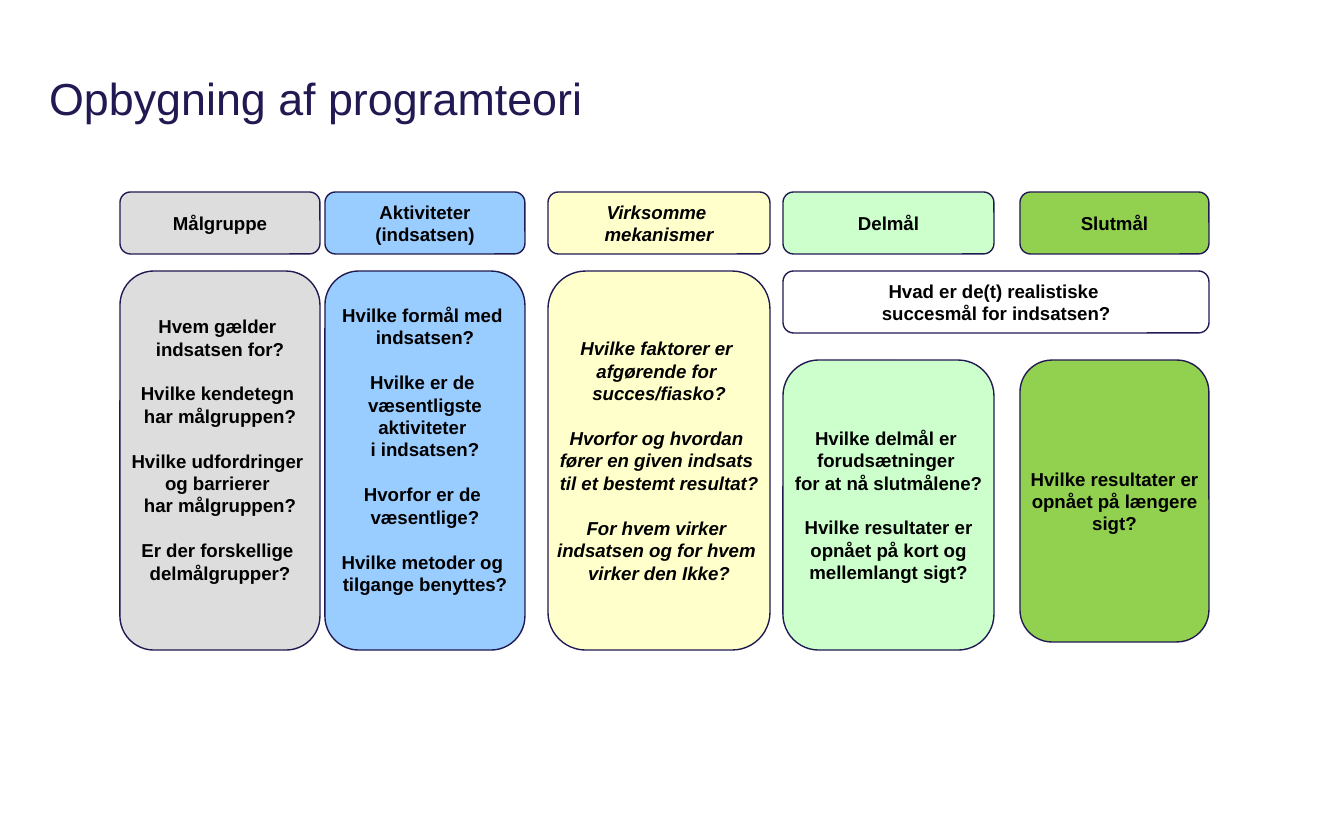
from pptx import Presentation
from pptx import util as u
from pptx.dml.color import RGBColor
from pptx.enum import shapes, text

PX = 914400 / 134.4
FONT = "Arial"
COLORS = {"ink": "211A52", "text": "000000", "gray": "DDDDDD", "blue": "99CCFF",
          "cream": "FFFFCC", "mint": "CCFFCC", "green": "92D050", "white": "FFFFFF"}
TOP, HEAD, DROP, LOW = 192, 62, 79, 168
BLANK = 22

COLUMNS = [
    ((120, TOP, 200, 458), "gray", DROP, BLANK, False, "Målgruppe",
     ["Hvem gælder \nindsatsen for?",
      "Hvilke kendetegn \nhar målgruppen?",
      "Hvilke udfordringer \nog barrierer \nhar målgruppen?",
      "Er der forskellige \ndelmålgrupper?"]),
    ((325, TOP, 200, 458), "blue", DROP, BLANK, False, "Aktiviteter\n(indsatsen)",
     ["Hvilke formål med \nindsatsen?",
      "Hvilke er de \nvæsentligste\naktiviteter \ni indsatsen?",
      "Hvorfor er de \nvæsentlige?",
      "Hvilke metoder og \ntilgange benyttes?"]),
    ((548, TOP, 222, 458), "cream", DROP, 0, True, "Virksomme \nmekanismer",
     ["Hvilke faktorer er \nafgørende for \nsucces/fiasko?",
      "Hvorfor og hvordan \nfører en given indsats \ntil et bestemt resultat?",
      "For hvem virker \nindsatsen og for hvem \nvirker den Ikke?"]),
    ((783, TOP, 211, 458), "mint", LOW, 0, False, "Delmål",
     ["Hvilke delmål er \nforudsætninger \nfor at nå slutmålene?",
      "Hvilke resultater er\nopnået på kort og\nmellemlangt sigt?"]),
    ((1020, TOP, 189, 450), "green", LOW, 0, False, "Slutmål",
     ["Hvilke resultater er\nopnået på længere\nsigt?"]),
]
GOAL = "Hvad er de(t) realistiske \nsuccesmål for indsatsen?"


def px(*sizes):
    """Turn px lengths into EMU."""
    return [u.Emu(round(size * PX)) for size in sizes]


def rgb(name):
    """Look up a named colour."""
    return RGBColor.from_string(COLORS[name])


def style(para, size, color, bold=False, slant=False):
    """Format the runs of a paragraph."""
    for run in para.runs:
        font = run.font
        font.name, font.size = FONT, u.Pt(size)
        font.bold, font.italic = bold, slant
        font.color.rgb = rgb(color)


def card(slide, box, tint, groups, slant=False, pad=0):
    """Draw a rounded box with centred groups of lines."""
    shape = slide.shapes.add_shape(shapes.MSO_SHAPE.ROUNDED_RECTANGLE, *px(*box))
    shape.shadow.inherit = False
    shape.adjustments[0] = 0.17
    shape.fill.solid()
    shape.fill.fore_color.rgb = rgb(tint)
    shape.line.color.rgb = rgb("ink")
    shape.line.width = u.Pt(0.75)
    frame = shape.text_frame
    frame.word_wrap = False
    frame.vertical_anchor = text.MSO_ANCHOR.MIDDLE
    frame.margin_bottom += px(pad)[0]
    frame.text = "\n".join(groups)
    starts, row = set(), 0
    for group in groups[:-1]:
        row += len(group.split("\n"))
        starts.add(row)
    for row, para in enumerate(frame.paragraphs):
        para.alignment = text.PP_ALIGN.CENTER
        if row in starts:
            para.space_before = u.Pt(12)
        style(para, 10, "text", True, slant)


def column(slide, box, tint, drop, pad, slant, head, groups):
    """Draw a heading card and the question card below it."""
    x, y, w, h = box
    card(slide, (x, y, w, HEAD), tint, [head], slant)
    card(slide, (x, y + drop, w, h - drop), tint, groups, slant, pad)


def title(slide, box, words):
    """Write the slide title."""
    frame = slide.shapes.add_textbox(*px(*box)).text_frame
    frame.word_wrap = True
    frame.vertical_anchor = text.MSO_ANCHOR.MIDDLE
    frame.text = words
    style(frame.paragraphs[0], 24, "ink")


def main():
    """Build and save the slide."""
    deck = Presentation()
    deck.slide_width, deck.slide_height = px(1344, 840)
    slide = deck.slides.add_slide(deck.slide_layouts[6])
    title(slide, (36, 28, 1210, 140), "Opbygning af programteori")
    for part in COLUMNS:
        column(slide, *part)
    left, right = COLUMNS[3][0], COLUMNS[4][0]
    span = right[0] + right[2] - left[0]
    card(slide, (left[0], TOP + DROP, span, HEAD), "white", [GOAL])
    deck.save("out.pptx")


if __name__ == "__main__":
    main()
